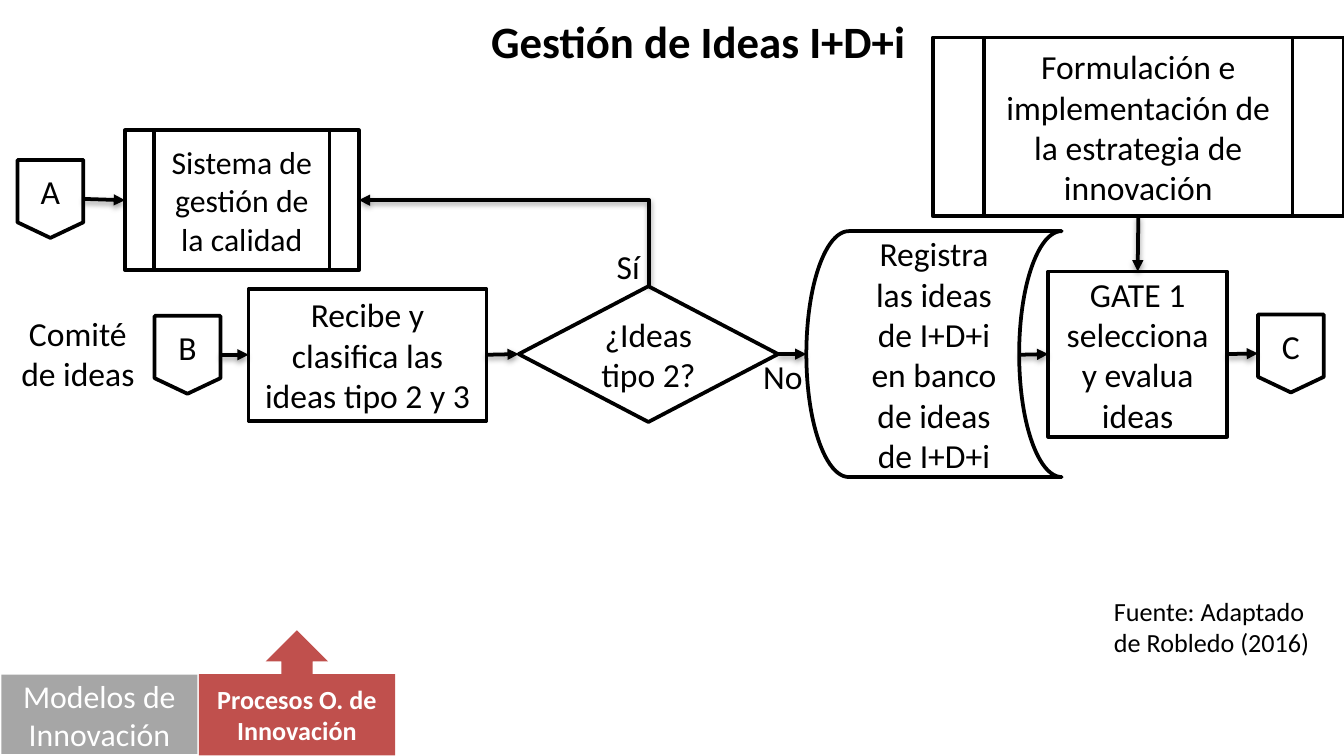
from dataclasses import dataclass

from lxml.etree import SubElement
from pptx import Presentation
from pptx.dml.color import RGBColor
from pptx.enum.shapes import MSO_CONNECTOR, MSO_SHAPE
from pptx.enum.text import MSO_ANCHOR, MSO_AUTO_SIZE, PP_ALIGN
from pptx.oxml.ns import qn
from pptx.util import Emu, Pt

PX = 9144  # one px is a hundredth of an inch
SLIDE_WIDTH = 1000
FONT = "Calibri"
BLACK, WHITE, GREY, RED = "000000", "FFFFFF", "A6A6A6", "C0504D"
TOP, LEFT, BOTTOM, RIGHT = range(4)


@dataclass(frozen=True)
class Box:
    kind: MSO_SHAPE
    x: int
    y: int
    w: int
    h: int
    text: str
    size: int = 18
    bold: bool = False
    fill: str = WHITE
    ink: str = BLACK
    outlined: bool = True


@dataclass(frozen=True)
class Label:
    x: int
    y: int
    w: int
    h: int
    text: str
    size: int = 18
    bold: bool = False
    align: PP_ALIGN = PP_ALIGN.LEFT
    wrap: bool = True


def px(n: int) -> Emu:
    return Emu(n * PX)


def color(value: str) -> RGBColor:
    return RGBColor.from_string(value)


def write(frame, text: str, size: int, bold: bool, ink: str, align: PP_ALIGN) -> None:
    paragraph = frame.paragraphs[0]
    paragraph.alignment = align
    run = paragraph.add_run()
    run.text = text
    run.font.name = FONT
    run.font.size = Pt(size)
    run.font.bold = bold
    run.font.color.rgb = color(ink)


def draw_box(shapes, box: Box):
    shape = shapes.add_shape(box.kind, px(box.x), px(box.y), px(box.w), px(box.h))
    shape.shadow.inherit = False
    shape.fill.solid()
    shape.fill.fore_color.rgb = color(box.fill)
    if box.outlined:
        shape.line.color.rgb = color(BLACK)
        shape.line.width = Pt(2)
    else:
        shape.line.fill.background()
    frame = shape.text_frame
    frame.word_wrap = True
    frame.vertical_anchor = MSO_ANCHOR.MIDDLE
    write(frame, box.text, box.size, box.bold, box.ink, PP_ALIGN.CENTER)
    return shape


def draw_label(shapes, label: Label) -> None:
    textbox = shapes.add_textbox(px(label.x), px(label.y), px(label.w), px(label.h))
    frame = textbox.text_frame
    frame.word_wrap = label.wrap
    frame.auto_size = MSO_AUTO_SIZE.SHAPE_TO_FIT_TEXT
    write(frame, label.text, label.size, label.bold, BLACK, label.align)


def draw_arrow(shapes, kind: MSO_CONNECTOR, x1: int, y1: int, x2: int, y2: int):
    arrow = shapes.add_connector(kind, px(x1), px(y1), px(x2), px(y2))
    arrow.line.color.rgb = color(BLACK)
    arrow.line.width = Pt(2)
    SubElement(arrow.line._get_or_add_ln(), qn("a:tailEnd"), type="triangle")
    # Soft shadow straight below the line
    effects = SubElement(arrow._element.spPr, qn("a:effectLst"))
    shadow = SubElement(effects, qn("a:outerShdw"), blurRad=str(Pt(3.1)),
                        dist=str(Pt(1.6)), dir="5400000", rotWithShape="0")
    tint = SubElement(shadow, qn("a:srgbClr"), val=BLACK)
    SubElement(tint, qn("a:alpha"), val="38000")
    return arrow


def join(shapes, start, start_side: int, end, end_side: int) -> None:
    arrow = draw_arrow(shapes, MSO_CONNECTOR.STRAIGHT, 0, 0, 0, 0)
    arrow.begin_connect(start, start_side)
    arrow.end_connect(end, end_side)


OFFPAGE = MSO_SHAPE.FLOWCHART_OFFPAGE_CONNECTOR
SUBPROCESS = MSO_SHAPE.FLOWCHART_PREDEFINED_PROCESS
PROCESS = MSO_SHAPE.FLOWCHART_PROCESS

STEPS = {
    "a": Box(OFFPAGE, 13, 119, 49, 58, "A"),
    "quality": Box(SUBPROCESS, 93, 97, 174, 104, "Sistema de gestión de la calidad", 17),
    "b": Box(OFFPAGE, 115, 235, 49, 58, "B"),
    "classify": Box(PROCESS, 185, 215, 177, 98, "Recibe y clasifica las ideas tipo 2 y 3"),
    "type_2": Box(MSO_SHAPE.FLOWCHART_DECISION, 386, 213, 193, 101, "¿Ideas tipo 2?"),
    "idea_bank": Box(MSO_SHAPE.FLOWCHART_STORED_DATA, 600, 172, 190, 183,
                     "Registra las ideas de I+D+i en banco de ideas de I+D+i"),
    "gate_1": Box(PROCESS, 780, 202, 133, 123, "GATE 1 selecciona y evalua ideas"),
    "c": Box(OFFPAGE, 936, 234, 49, 58, "C"),
    "strategy": Box(SUBPROCESS, 694, 28, 306, 133,
                    "Formulación e implementación de la estrategia de innovación"),
}

FLOWS = [
    ("a", RIGHT, "quality", LEFT),
    ("b", RIGHT, "classify", LEFT),
    ("classify", RIGHT, "type_2", LEFT),
    ("type_2", RIGHT, "idea_bank", LEFT),
    ("gate_1", RIGHT, "c", LEFT),
    ("strategy", BOTTOM, "gate_1", TOP),
]

LABELS = [
    Label(819, 438, 182, 57, "Fuente: Adaptado de Robledo (2016)", 14),
    Label(1, 228, 114, 71, "Comité de ideas", align=PP_ALIGN.CENTER),
    Label(449, 178, 38, 40, "Sí", wrap=False),
    Label(558, 260, 50, 40, "No", wrap=False),
    Label(169, 5, 701, 50, "Gestión de Ideas I+D+i", 24, True, PP_ALIGN.CENTER),
]

TABS = [
    Box(MSO_SHAPE.RECTANGLE, 1, 502, 146, 59, "Modelos de Innovación", 17,
        fill=GREY, ink=WHITE, outlined=False),
    Box(MSO_SHAPE.UP_ARROW_CALLOUT, 148, 469, 146, 93, "Procesos O. de Innovación", 14,
        bold=True, fill=RED, ink=WHITE, outlined=False),
]


def main() -> None:
    deck = Presentation()
    deck.slide_width = px(SLIDE_WIDTH)
    deck.slide_height = Emu(px(SLIDE_WIDTH) * 9 // 16)
    shapes = deck.slides.add_slide(deck.slide_layouts[6]).shapes

    # Flowchart steps and the arrows between them
    steps = {key: draw_box(shapes, box) for key, box in STEPS.items()}
    for start, start_side, end, end_side in FLOWS:
        join(shapes, steps[start], start_side, steps[end], end_side)

    # The idea bank's curved right side lies inside its frame
    from_bank = draw_arrow(shapes, MSO_CONNECTOR.STRAIGHT, 758, 264, 780, 264)
    from_bank.end_connect(steps["gate_1"], LEFT)

    # "Sí" branch: up from the decision, then left to the quality system
    yes_branch = draw_arrow(shapes, MSO_CONNECTOR.ELBOW, 343, 73, 407, 289)
    outline = yes_branch._element.spPr
    outline.find(qn("a:prstGeom")).set("prst", "bentConnector2")
    turn = outline.find(qn("a:xfrm"))
    turn.set("rot", "16200000")
    turn.set("flipV", "1")

    # Title, captions and section tabs
    for label in LABELS:
        draw_label(shapes, label)
    for tab in TABS:
        draw_box(shapes, tab)

    deck.save("out.pptx")


if __name__ == "__main__":
    main()
